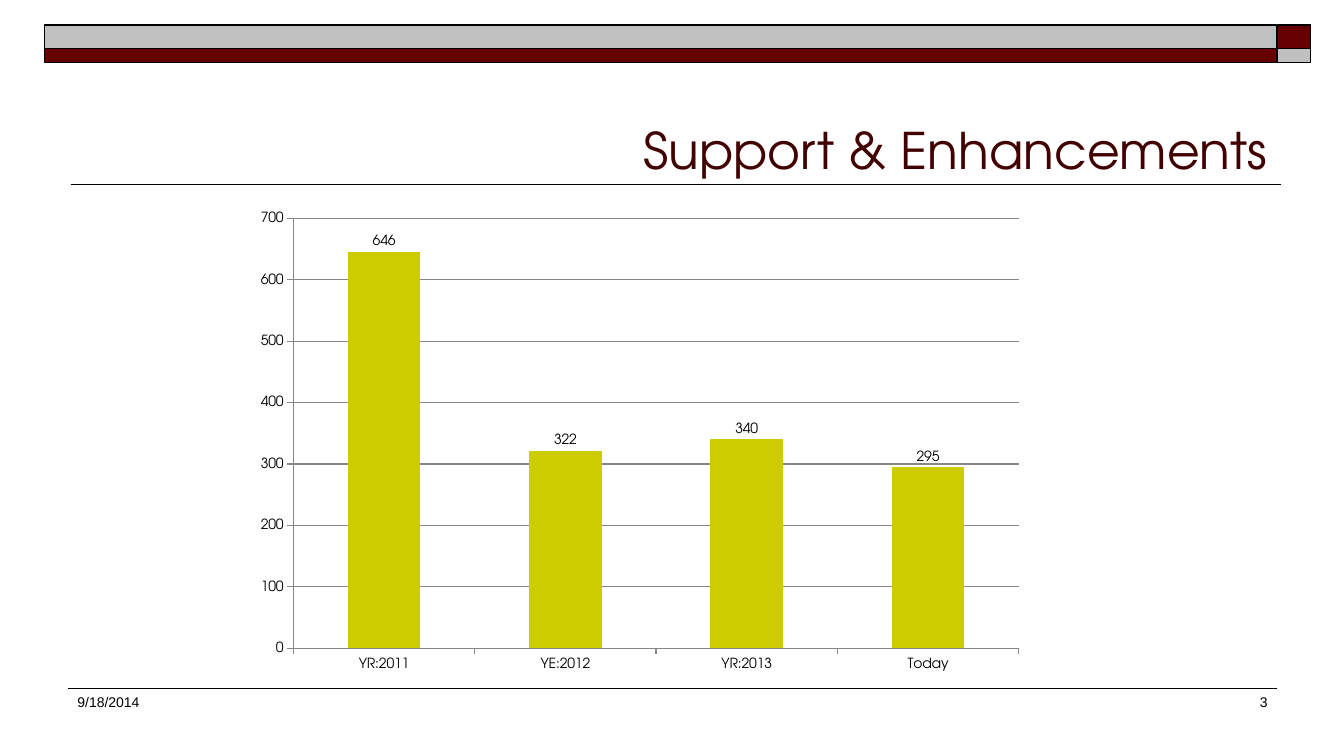
from lxml import etree
from pptx import Presentation
from pptx.chart.data import CategoryChartData
from pptx.dml.color import RGBColor
from pptx.enum.chart import XL_CHART_TYPE, XL_LABEL_POSITION, XL_TICK_MARK
from pptx.enum.shapes import MSO_CONNECTOR, MSO_SHAPE
from pptx.enum.text import MSO_ANCHOR, PP_ALIGN
from pptx.oxml.ns import qn
from pptx.util import Inches, Pt

BLACK = RGBColor(0x00, 0x00, 0x00)
MAROON = RGBColor(0x66, 0x00, 0x00)
DARK = RGBColor(0x42, 0x00, 0x00)
SILVER = RGBColor(0xC0, 0xC0, 0xC0)
GRAY = RGBColor(0x87, 0x87, 0x87)
LIME = RGBColor(0xCC, 0xCC, 0x00)
COLUMN = XL_CHART_TYPE.COLUMN_CLUSTERED
OUTSIDE = XL_TICK_MARK.OUTSIDE
ABOVE = XL_LABEL_POSITION.OUTSIDE_END
RECT = MSO_SHAPE.RECTANGLE
LINE = MSO_CONNECTOR.STRAIGHT
LEFT, RIGHT = PP_ALIGN.LEFT, PP_ALIGN.RIGHT
BOTTOM = MSO_ANCHOR.BOTTOM
FACE = "TeX Gyre Adventor"

deck = Presentation()
deck.slide_width, deck.slide_height = Inches(13.33), Inches(7.5)
slide = deck.slides.add_slide(deck.slide_layouts[5])
shapes = slide.shapes


def style(par, text, size, face, color, align):
    par.text = text
    par.alignment = align
    par.font.size = Pt(size)
    par.font.name = face
    par.font.color.rgb = color


cols = [(0.44, 12.22), (12.67, 0.33)]
rows = [(0.25, 0.23), (0.48, 0.14)]
for r, (top, high) in enumerate(rows):
    for c, (left, wide) in enumerate(cols):
        bar = shapes.add_shape(RECT, Inches(left), Inches(top), Inches(wide), Inches(high))
        bar.shadow.inherit = False
        bar.fill.solid()
        bar.fill.fore_color.rgb = SILVER if r == c else MAROON
        bar.line.color.rgb = BLACK
        bar.line.width = Pt(1)

for start, end, y, width in [(0.7, 12.71, 1.83, 1), (0.67, 12.67, 6.83, 0.75)]:
    rule = shapes.add_connector(LINE, Inches(start), Inches(y), Inches(end), Inches(y))
    rule.line.color.rgb = BLACK
    rule.line.width = Pt(width)
    etree.SubElement(rule._element.spPr, qn("a:effectLst"))

title = shapes.title
title.left, title.top = Inches(0.67), Inches(0.58)
title.width, title.height = Inches(12), Inches(1.25)
title.text_frame.vertical_anchor = BOTTOM
style(title.text_frame.paragraphs[0], "Support & Enhancements", 36, FACE, DARK, RIGHT)

for left, wide, text, align in [(0.67, 2.44, "9/18/2014", LEFT), (9.89, 2.78, "3", RIGHT)]:
    box = shapes.add_textbox(Inches(left), Inches(6.83), Inches(wide), Inches(0.5))
    box.text_frame.word_wrap = True
    style(box.text_frame.paragraphs[0], text, 10, "Arial", BLACK, align)

data = CategoryChartData()
data.categories = ["YR:2011", "YE:2012", "YR:2013", "Today"]
data.add_series("Series 1", [646, 322, 340, 295])
frame = shapes.add_chart(COLUMN, Inches(2.43), Inches(2.01), Inches(7.83), Inches(4.74), data)
chart = frame.chart
chart.has_title = False
chart.has_legend = False
chart.font.size = Pt(10)
chart.font.name = FACE
chart.font.color.rgb = BLACK

for axis in (chart.category_axis, chart.value_axis):
    axis.major_tick_mark = OUTSIDE
    axis.format.line.color.rgb = GRAY
scale = chart.value_axis
scale.minimum_scale, scale.maximum_scale, scale.major_unit = 0, 700, 100
scale.has_major_gridlines = True
scale.major_gridlines.format.line.color.rgb = GRAY

plot = chart.plots[0]
plot.gap_width = 150
plot.vary_by_categories = False
fill = plot.series[0].format.fill
fill.solid()
fill.fore_color.rgb = LIME
plot.has_data_labels = True
plot.data_labels.show_value = True
plot.data_labels.position = ABOVE

deck.save("out.pptx")
